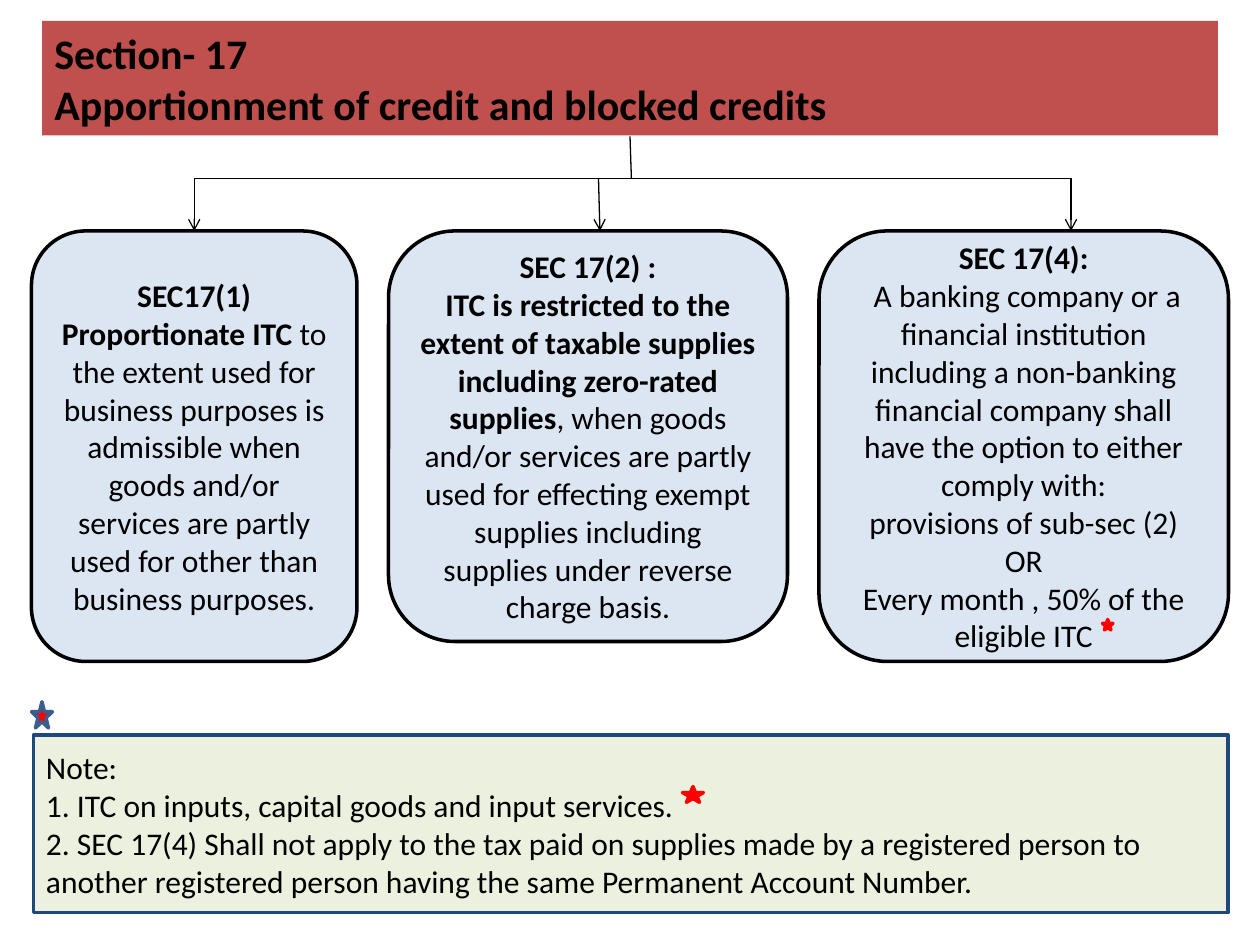
import pptx
import pptx.dml.color
import pptx.enum.shapes
import pptx.enum.text
import pptx.oxml
import pptx.oxml.ns
import pptx.util

Pt = pptx.util.Pt
SHAPES = pptx.enum.shapes.MSO_SHAPE
ALIGN = pptx.enum.text.PP_ALIGN
ANCHOR = pptx.enum.text.MSO_ANCHOR

BLACK, RED = "000000", "FF0000"
BRICK, PALE_BLUE, PALE_GREEN = "C0504D", "DCE6F2", "EBF1DE"
NAVY, STEEL = "1F497D", "3A5F8C"

TITLE = [
    [("Section- 17", True)],
    [("Apportionment of credit and blocked credits", True)],
]
SECTION_1 = [
    [("SEC17(1) Proportionate ITC", True),
     ("\u00a0to the extent used for business purposes is admissible when goods "
      "and/or services are partly used for other than business purposes.", False)],
]
SECTION_2 = [
    [("SEC 17(2) :", True)],
    [("ITC is restricted to the extent of taxable supplies including "
      "zero-rated supplies", True),
     (", when goods and/or services are partly used for effecting exempt "
      "supplies including supplies under reverse charge basis.", False)],
]
SECTION_4 = [
    [("SEC 17(4):", True)],
    [(" ", True),
     ("A banking company or a financial institution including a non-banking "
      "financial company shall have the option to either comply with:", False)],
    [("provisions of sub-sec (2)", False)],
    [("OR", False)],
    [("Every month , 50% of the eligible ITC", False)],
]
NOTE = [
    [("Note:", False)],
    [("1. ITC on inputs, capital goods and input services.", False)],
    [("2. SEC 17(4) Shall not apply to the tax paid on supplies made by a "
      "registered person to another registered person having the same "
      "Permanent Account Number.", False)],
]


def color(hex_string):
    return pptx.dml.color.RGBColor.from_string(hex_string)


def add_shape(slide, kind, box, fill, line=None):
    shape = slide.shapes.add_shape(kind, *(Pt(length) for length in box))
    shape.shadow.inherit = False
    shape.fill.solid()
    shape.fill.fore_color.rgb = color(fill)
    if line:
        shape.line.color.rgb = color(line)
        shape.line.width = Pt(2)
    else:
        shape.line.fill.background()
    return shape


def write_text(shape, paragraphs, size, alignment):
    frame = shape.text_frame
    frame.word_wrap = True
    frame.vertical_anchor = ANCHOR.MIDDLE
    for index, runs in enumerate(paragraphs):
        paragraph = frame.add_paragraph() if index else frame.paragraphs[0]
        paragraph.alignment = alignment
        for text, bold in runs:
            run = paragraph.add_run()
            run.text = text
            run.font.name = "Calibri"
            run.font.size = Pt(size)
            run.font.bold = bold
            run.font.color.rgb = color(BLACK)


def add_line(slide, start, end, arrow=False):
    points = (Pt(length) for length in (*start, *end))
    connector = slide.shapes.add_connector(
        pptx.enum.shapes.MSO_CONNECTOR.STRAIGHT, *points)
    connector.line.color.rgb = color(BLACK)
    connector.line.width = Pt(0.75)
    if arrow:
        tail = pptx.oxml.parse_xml(
            f'<a:tailEnd {pptx.oxml.ns.nsdecls("a")} type="arrow"/>')
        connector.line._get_or_add_ln().append(tail)
    connector._element.spPr.append(
        pptx.oxml.parse_xml(f'<a:effectLst {pptx.oxml.ns.nsdecls("a")}/>'))


def add_title(slide, box):
    banner = add_shape(slide, SHAPES.RECTANGLE, box, BRICK)
    write_text(banner, TITLE, 24, ALIGN.LEFT)


def add_branches(slide, box, trunk, branches):
    """Trunk from the top of the box, a crossbar, and an arrow to each section."""
    left, top, width, height = box
    bar, bottom = top + 24, top + height
    add_line(slide, (trunk, top), (trunk + 0.8, bar))
    add_line(slide, (left, bar), (left + width, bar))
    for start, end in branches:
        add_line(slide, (start, bar), (end, bottom), arrow=True)


def add_section(slide, box, paragraphs):
    section = add_shape(slide, SHAPES.ROUNDED_RECTANGLE, box, PALE_BLUE, BLACK)
    write_text(section, paragraphs, 18, ALIGN.CENTER)


def add_note(slide, box):
    note = add_shape(slide, SHAPES.RECTANGLE, box, PALE_GREEN, NAVY)
    write_text(note, NOTE, 18, ALIGN.LEFT)


def add_star(slide, box, line):
    add_shape(slide, SHAPES.STAR_5_POINT, box, RED, line)


def main():
    presentation = pptx.Presentation()
    presentation.slide_width, presentation.slide_height = Pt(720), Pt(540)
    slide = presentation.slides.add_slide(presentation.slide_layouts[6])

    # Title and branching arrows
    add_title(slide, (24, 12, 672, 65.4))
    add_branches(slide, (111, 78, 501, 54), 360,
                 [(111, 111), (342, 342.8), (612, 612)])

    # Sections
    for left, width, height, paragraphs in (
        (18, 186, 246, SECTION_1),
        (222, 228, 234.6, SECTION_2),
        (468, 234, 246, SECTION_4),
    ):
        add_section(slide, (left, 132, width, height), paragraphs)

    # Note and its star markers
    add_note(slide, (19.2, 420, 682.5, 101.5))
    add_star(slide, (18, 401, 12, 15), STEEL)
    add_star(slide, (630, 354, 6, 6), RED)
    add_star(slide, (390, 449.5, 12, 9), RED)

    presentation.save("out.pptx")


if __name__ == "__main__":
    main()
